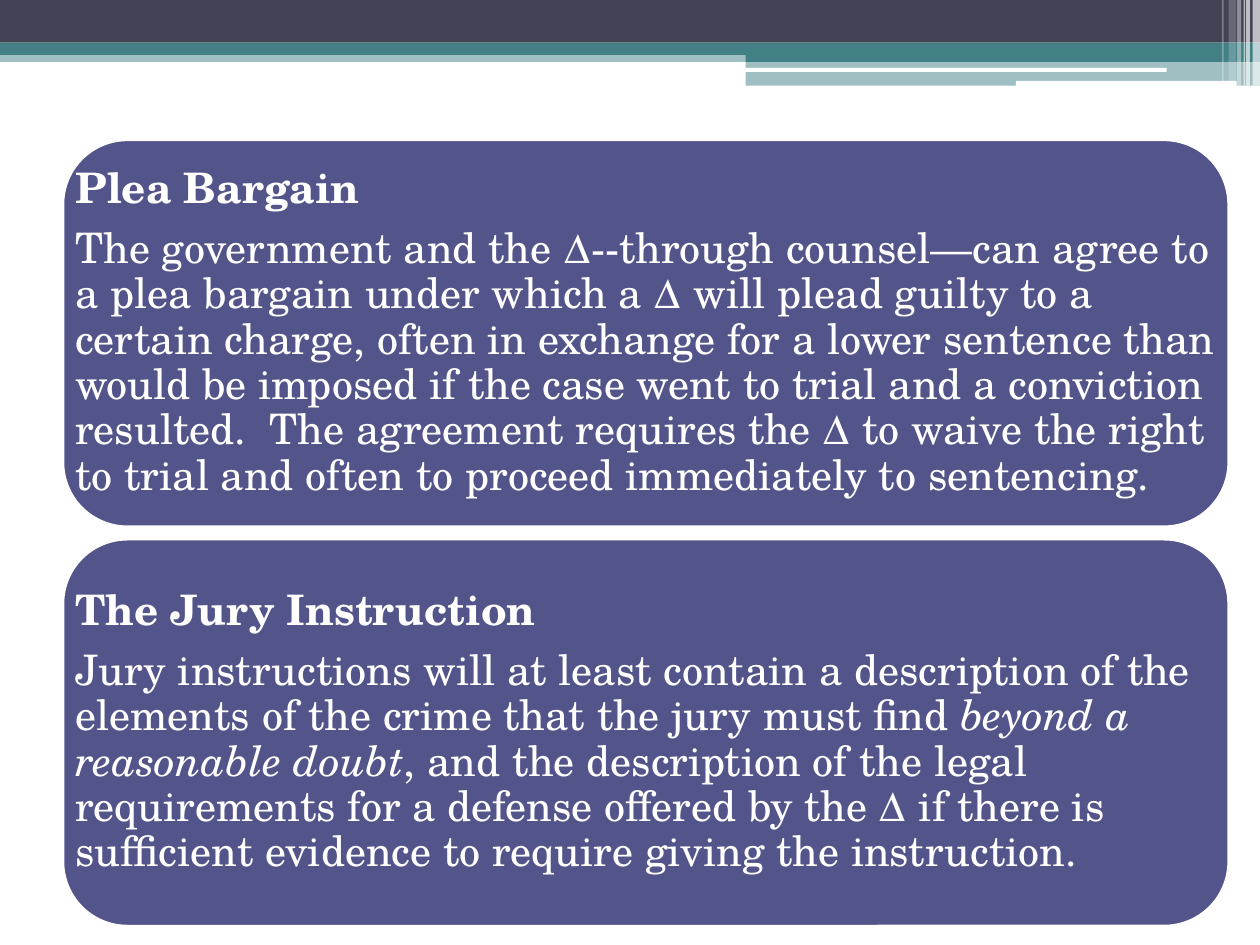
"""Build a slide with two rounded text panels under a layered header band."""
from dataclasses import dataclass

from lxml.etree import SubElement
from pptx import Presentation
from pptx.dml.color import RGBColor
from pptx.enum.shapes import MSO_SHAPE as Preset
from pptx.enum.text import MSO_ANCHOR as Anchor
from pptx.oxml.ns import qn
from pptx.shapes.autoshape import Shape
from pptx.slide import Slide
from pptx.util import Cm, Pt

COLORS = {"navy": "424456", "teal": "438086", "panel": "53548A", "white": "FFFFFF"}
FONT = {"name": "TeX Gyre Schola", "size": Pt(24)}
PARAGRAPH = {"line_spacing": 0.9, "space_after": Pt(8.4)}
FRAME = {
    "word_wrap": True,
    "vertical_anchor": Anchor.MIDDLE,
    **{f"margin_{side}": Cm(0.25) for side in ("left", "top", "right", "bottom")},
}
SLIDE_WIDTH, SLIDE_HEIGHT = 25.4, 19.05
PANEL_LEFT, PANEL_TOP, PANEL_WIDTH, PANEL_HEIGHT = 1.27, 2.82, 23.5, 7.8
PANEL_STEP = 8.05
TAB_LEFT = 15.03


@dataclass(frozen=True)
class Bar:
    """A filled bar of the header; lengths in centimetres, opacity in percent."""
    left: float
    top: float
    width: float
    height: float
    color: str
    opacity: int = 100
    preset: Preset = Preset.RECTANGLE


@dataclass(frozen=True)
class Span:
    """A piece of text with its emphasis."""
    text: str
    bold: bool = False
    italic: bool = False


@dataclass(frozen=True)
class Panel:
    """A heading with the spans of the paragraph below it."""
    heading: str
    body: tuple[Span, ...]


BANDS = (
    Bar(0, 1.02, SLIDE_WIDTH, 0.23, "teal", 50),
    Bar(0, 0, SLIDE_WIDTH, 0.86, "navy"),
    Bar(0, 0.86, SLIDE_WIDTH, 0.25, "teal"),
    Bar(TAB_LEFT, 0.99, SLIDE_WIDTH - TAB_LEFT, 0.26, "teal"),
    Bar(TAB_LEFT, 1.23, SLIDE_WIDTH - TAB_LEFT, 0.5, "teal", 50),
    Bar(15.02, 1.37, 8.5, 0.08, "white", preset=Preset.ROUNDED_RECTANGLE),
    Bar(20.48, 1.63, 4.45, 0.1, "white", preset=Preset.ROUNDED_RECTANGLE),
)
STRIPES = tuple(
    Bar(left, 0, width, height, "white", opacity)
    for left, width, height, opacity in (
        (25.25, 0.15, 1.73, 65),
        (25.12, 0.08, 1.73, 65),
        (25.07, 0.03, 1.73, 60),
        (24.94, 0.08, 1.73, 40),
        (24.77, 0.15, 1.63, 20),
        (24.64, 0.03, 1.63, 30),
    )
)
PANELS = (
    Panel("Plea Bargain", (
        Span("The government and the ∆--through counsel—can agree to a plea bargain "
             "under which a ∆ will plead guilty to a certain charge, often in exchange "
             "for a lower sentence than would be imposed if the case went to trial and "
             "a conviction resulted.  The agreement requires the ∆ to waive the right "
             "to trial and often to proceed immediately to sentencing."),
    )),
    Panel("The Jury Instruction", (
        Span("Jury instructions will at least contain a description of the elements "
             "of the crime that the jury must find "),
        Span("beyond a reasonable doubt", italic=True),
        Span(", and the description of the legal requirements for a defense offered "
             "by the ∆ if there is sufficient evidence to require giving the "
             "instruction."),
    )),
)


def apply_format(target: object, values: dict) -> None:
    """Set every format value on the target."""
    for name, value in values.items():
        setattr(target, name, value)


def draw_bar(slide: Slide, bar: Bar) -> Shape:
    """Draw a filled bar without an outline."""
    shape = slide.shapes.add_shape(
        bar.preset, Cm(bar.left), Cm(bar.top), Cm(bar.width), Cm(bar.height))
    shape.shadow.inherit = False
    shape.line.fill.background()
    shape.fill.solid()
    shape.fill.fore_color.rgb = RGBColor.from_string(COLORS[bar.color])
    if bar.opacity < 100:
        color = shape.fill._xPr.find(f".//{qn('a:srgbClr')}")
        SubElement(color, qn("a:alpha"), val=str(bar.opacity * 1000))
    return shape


def draw_panel(slide: Slide, panel: Panel, top: float) -> None:
    """Draw a rounded panel and the text box that covers it."""
    area = (PANEL_LEFT, top, PANEL_WIDTH, PANEL_HEIGHT)
    shape = draw_bar(slide, Bar(*area, "panel", preset=Preset.ROUNDED_RECTANGLE))
    shape.line.color.rgb = RGBColor.from_string(COLORS["white"])
    shape.line.width = Pt(1.5)

    frame = slide.shapes.add_textbox(*map(Cm, area)).text_frame
    apply_format(frame, FRAME)
    heading, body = frame.paragraphs[0], frame.add_paragraph()
    write_paragraph(heading, (Span(panel.heading, bold=True),))
    write_paragraph(body, panel.body)


def write_paragraph(paragraph: object, spans: tuple[Span, ...]) -> None:
    """Fill a paragraph with white formatted spans."""
    apply_format(paragraph, PARAGRAPH)
    for span in spans:
        run = paragraph.add_run()
        run.text = span.text
        apply_format(run.font, {**FONT, "bold": span.bold, "italic": span.italic})
        run.font.color.rgb = RGBColor.from_string(COLORS["white"])


def main() -> None:
    """Build and save the presentation."""
    presentation = Presentation()
    presentation.slide_width = Cm(SLIDE_WIDTH)
    presentation.slide_height = Cm(SLIDE_HEIGHT)
    slide = presentation.slides.add_slide(presentation.slide_layouts[6])
    for bar in BANDS + STRIPES:
        draw_bar(slide, bar)
    for index, panel in enumerate(PANELS):
        draw_panel(slide, panel, PANEL_TOP + index * PANEL_STEP)
    presentation.save("out.pptx")


if __name__ == "__main__":
    main()
